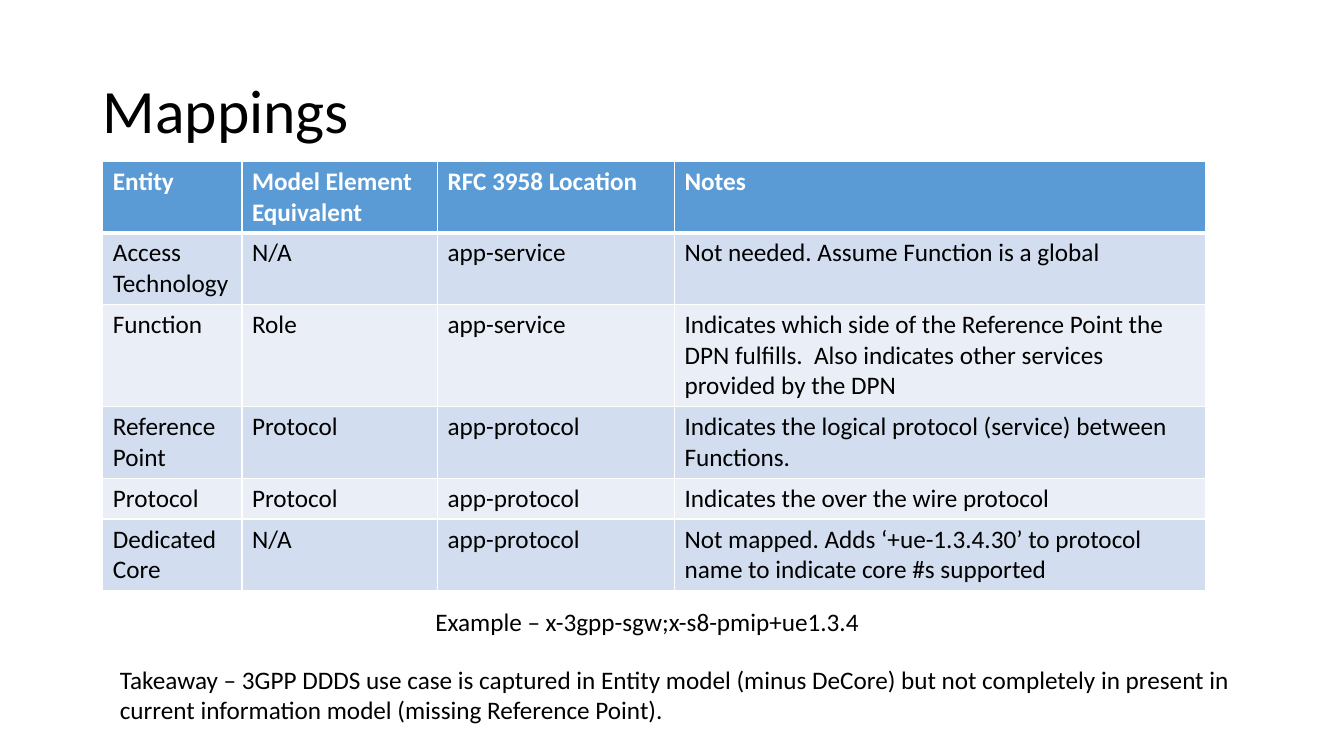
from lxml import etree
from pptx import Presentation
from pptx.dml.color import RGBColor
from pptx.enum.text import MSO_ANCHOR, MSO_AUTO_SIZE
from pptx.oxml.ns import qn
from pptx.util import Inches, Pt

COLORS = {"text": "000000", "white": "FFFFFF", "header": "5B9BD5",
          "odd": "D2DEEF", "even": "EAEFF7"}
FONT = "Calibri"
BODY_SIZE = 18
LINE_HEIGHT = 0.305
CELL_PADDING = 0.1


def write(text_frame, text, size=BODY_SIZE, color="text", bold=False):
    text_frame.text = text
    font = text_frame.paragraphs[0].runs[0].font
    font.name, font.size, font.bold = FONT, Pt(size), bold
    font.color.rgb = RGBColor.from_string(COLORS[color])


def add_border(cell, side, points):
    line = etree.SubElement(cell._tc.get_or_add_tcPr(), qn(f"a:ln{side}"), w=str(Pt(points)))
    fill = etree.SubElement(line, qn("a:solidFill"))
    etree.SubElement(fill, qn("a:srgbClr"), val=COLORS["white"])


presentation = Presentation()
presentation.slide_width = Inches(13.33)
presentation.slide_height = Inches(7.5)
slide = presentation.slides.add_slide(presentation.slide_layouts[6])

# Title
title = slide.shapes.add_textbox(Inches(0.92), Inches(0.4), Inches(11.5), Inches(1.45))
title.text_frame.word_wrap = True
title.text_frame.vertical_anchor = MSO_ANCHOR.MIDDLE
write(title.text_frame, "Mappings", size=44)
title.text_frame.paragraphs[0].line_spacing = 0.9

# Mapping table: each row is as tall as its number of text lines
column_widths = [1.38, 1.94, 2.35, 5.27]
line_counts = [2, 2, 3, 2, 1, 2]
mappings = [
    ["Entity", "Model Element Equivalent", "RFC 3958 Location", "Notes"],
    ["Access Technology", "N/A", "app-service", "Not needed. Assume Function is a global"],
    ["Function", "Role", "app-service",
     "Indicates which side of the Reference Point the DPN fulfills.  "
     "Also indicates other services provided by the DPN"],
    ["Reference Point", "Protocol", "app-protocol",
     "Indicates the logical protocol (service) between Functions."],
    ["Protocol", "Protocol", "app-protocol", "Indicates the over the wire protocol"],
    ["Dedicated Core", "N/A", "app-protocol",
     "Not mapped. Adds ‘+ue-1.3.4.30’ to protocol name to indicate core #s supported"],
]
row_heights = [CELL_PADDING + LINE_HEIGHT * count for count in line_counts]
table = slide.shapes.add_table(
    len(mappings), len(column_widths), Inches(1.02), Inches(1.6),
    Inches(sum(column_widths)), Inches(sum(row_heights))).table
for column, width in zip(table.columns, column_widths):
    column.width = Inches(width)
for row_index, (row, height) in enumerate(zip(table.rows, row_heights)):
    row.height = Inches(height)
    is_header = row_index == 0
    band = "header" if is_header else ("odd" if row_index % 2 else "even")
    for cell, text in zip(row.cells, mappings[row_index]):
        write(cell.text_frame, text, color="white" if is_header else "text", bold=is_header)
        for side in "LRTB":
            header_edge = (row_index, side) in [(0, "B"), (1, "T")]
            add_border(cell, side, 3 if header_edge else 1)
        cell.fill.solid()
        cell.fill.fore_color.rgb = RGBColor.from_string(COLORS[band])

# Example and takeaway below the table
footers = [
    (4.22, 5.97, 4.53, 0.4, False, "Example – x-3gpp-sgw;x-s8-pmip+ue1.3.4"),
    (1.09, 6.54, 11.32, 0.71, True,
     "Takeaway – 3GPP DDDS use case is captured in Entity model (minus DeCore) but not "
     "completely in present in current information model (missing Reference Point)."),
]
for left, top, width, height, wraps, text in footers:
    footer = slide.shapes.add_textbox(Inches(left), Inches(top), Inches(width), Inches(height))
    footer.text_frame.word_wrap = wraps
    footer.text_frame.auto_size = MSO_AUTO_SIZE.SHAPE_TO_FIT_TEXT
    write(footer.text_frame, text)

presentation.save("out.pptx")
